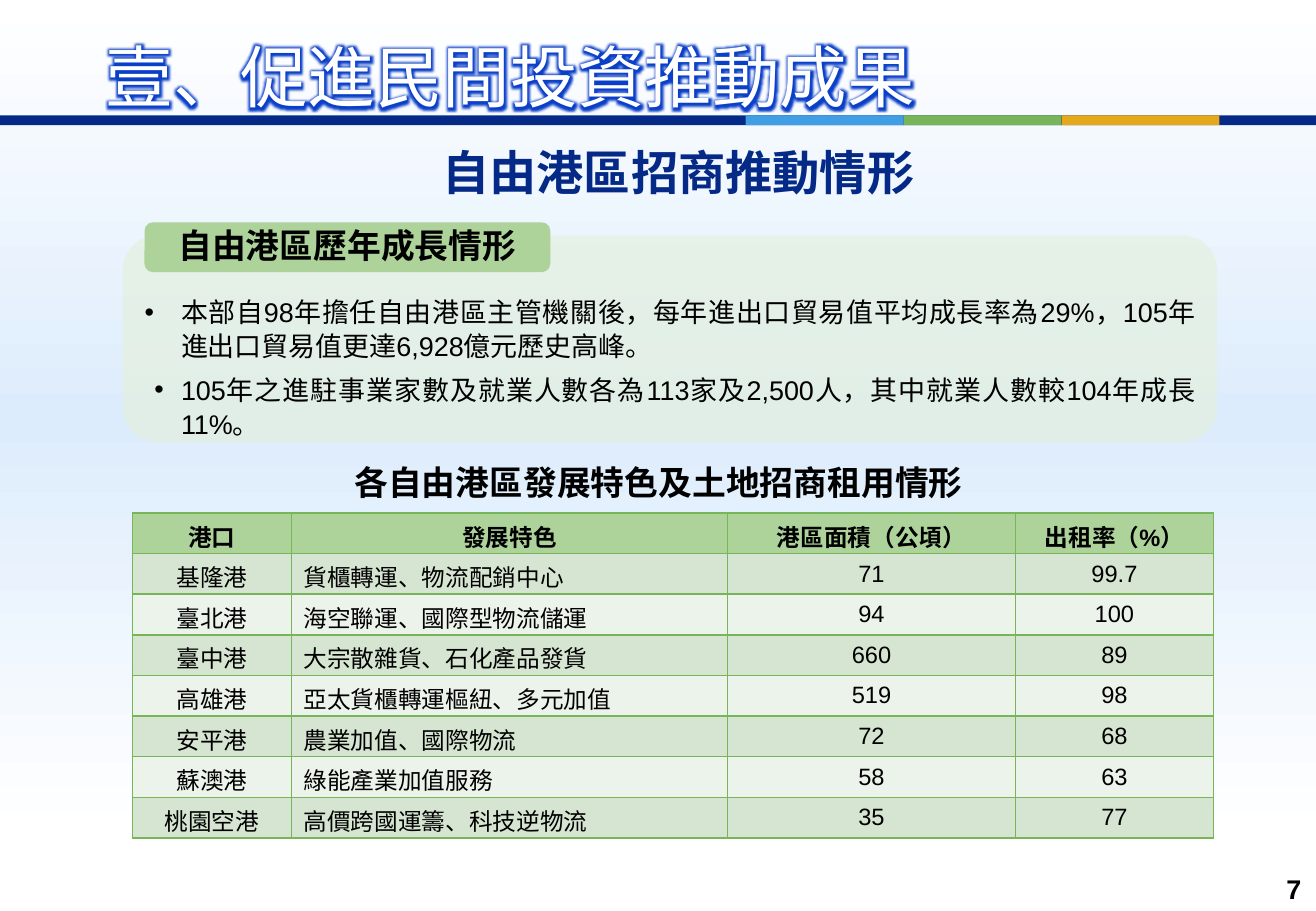
"""Build the slide on free trade port zone results."""
from pptx import Presentation
from pptx.dml.color import RGBColor as RGB
from pptx.enum.shapes import MSO_SHAPE as Geo
from pptx.enum.text import MSO_ANCHOR as Anchor, MSO_AUTO_SIZE as Auto, PP_ALIGN as Align
from pptx.oxml import parse_xml
from pptx.oxml.ns import nsdecls, qn
from pptx.util import Pt

HUES = {
    "navy": "042986", "sky": "3F9EE4", "green": "77B559", "gold": "E4A81B",
    "head": "ADD39B", "odd": "D6E5D1", "even": "ECF3EA", "panel": "E4F0DE",
    "mist": "DDECFC", "glow": "0A3FC8", "white": "FFFFFF", "black": "000000",
}
NS = nsdecls("a")


def put(frame, text, font, para, hue="black", **box):
    """Fill a text frame with one formatted paragraph."""
    base = dict(word_wrap=True, auto_size=Auto.NONE, vertical_anchor=Anchor.MIDDLE)
    for key, val in (base | box).items():
        setattr(frame, key, val)
    line = frame.paragraphs[0]
    line.text = text
    for key, val in para.items():
        setattr(line, key, val)
    run = line.runs[0]
    for key, val in (dict(name="Arial") | font).items():
        setattr(run.font, key, val)
    run.font.color.rgb = RGB.from_string(HUES[hue])
    return run


def block(kind, left, top, width, height, hue):
    """Add a plain filled shape."""
    item = shapes.add_shape(kind, Pt(left), Pt(top), Pt(width), Pt(height))
    item.shadow.inherit = False
    item.line.fill.background()
    item.fill.solid()
    item.fill.fore_color.rgb = RGB.from_string(HUES[hue])
    return item


deck = Presentation()
deck.slide_width, deck.slide_height = Pt(780), Pt(540)
slide = deck.slides.add_slide(deck.slide_layouts[1])
shapes = slide.shapes
title, body = slide.placeholders

back = block(Geo.RECTANGLE, 0, 0, 780, 495.4, "white")
stops = "".join(
    f'<a:gs pos="{pos}"><a:srgbClr val="{HUES[hue]}"/></a:gs>'
    for pos, hue in ((0, "white"), (50000, "mist"), (100000, "white"))
)
fill = back.element.spPr.find(qn("a:solidFill"))
fill.addnext(parse_xml(
    f'<a:gradFill {NS} rotWithShape="1"><a:gsLst>{stops}</a:gsLst>'
    '<a:lin ang="5400000" scaled="0"/></a:gradFill>'
))
back.element.spPr.remove(fill)

block(Geo.RECTANGLE, 0, 68.4, 780, 5.8, "navy")
for num, hue in enumerate(("sky", "green", "gold")):
    block(Geo.RECTANGLE, 442 + 93.6 * num, 68.4, 93.6, 5.8, hue)

panel = block(Geo.ROUNDED_RECTANGLE, 72.7, 139.7, 648.7, 122.4, "panel")
tint = panel.element.spPr.find(qn("a:solidFill"))[0]
tint.append(parse_xml(f'<a:alpha {NS} val="69000"/>'))

label = block(Geo.ROUNDED_RECTANGLE, 85.7, 131.8, 240.5, 29.5, "head")
put(label.text_frame, "自由港區歷年成長情形", dict(size=Pt(20), bold=True),
    dict(alignment=Align.CENTER, line_spacing=Pt(21.6)), margin_left=0, margin_right=0)

notes = (
    ("自由港區招商推動情形", 203, 81.4, 398.2, 41, 28, "navy", Align.CENTER),
    ("各自由港區發展特色及土地招商租用情形", 203, 270, 402.5, 31.7, 20, "black", Align.LEFT),
    ("7", 596.2, 514.1, 182.2, 25.9, 16, "black", Align.RIGHT),
)
for text, left, top, width, height, size, hue, side in notes:
    note = shapes.add_textbox(Pt(left), Pt(top), Pt(width), Pt(height))
    put(note.text_frame, text, dict(size=Pt(size), bold=True), dict(alignment=side), hue)

rows = (
    ("港口", "發展特色", "港區面積（公頃）", "出租率（%）"),
    ("基隆港", "貨櫃轉運、物流配銷中心", "71", "99.7"),
    ("臺北港", "海空聯運、國際型物流儲運", "94", "100"),
    ("臺中港", "大宗散雜貨、石化產品發貨", "660", "89"),
    ("高雄港", "亞太貨櫃轉運樞紐、多元加值", "519", "98"),
    ("安平港", "農業加值、國際物流", "72", "68"),
    ("蘇澳港", "綠能產業加值服務", "58", "63"),
    ("桃園空港", "高價跨國運籌、科技逆物流", "35", "77"),
)
table = shapes.add_table(8, 4, Pt(78.5), Pt(304), Pt(640.8), Pt(192.8)).table
table.horz_banding = False
for col, width in zip(table.columns, (94.3, 258.5, 170.6, 117.4)):
    col.width = Pt(width)
for y, row in enumerate(rows):
    table.rows[y].height = Pt(24.1)
    hue = "head" if y == 0 else "odd" if y % 2 else "even"
    for x, text in enumerate(row):
        cell = table.cell(y, x)
        cell.fill.solid()
        cell.fill.fore_color.rgb = RGB.from_string(HUES[hue])
        cell.vertical_anchor = Anchor.MIDDLE
        cell.margin_top = Pt(3 if y == 0 or x < 2 else 0)
        cell.margin_bottom = 0
        side = Align.JUSTIFY if y and x == 1 else Align.CENTER
        put(cell.text_frame, text, dict(size=Pt(14), bold=y == 0), dict(alignment=side),
            vertical_anchor=None, auto_size=None)
        props = cell._tc.get_or_add_tcPr()
        for spot, edge in enumerate("LRTB"):
            props.insert(spot, parse_xml(
                f'<a:ln{edge} {NS} w="12700"><a:solidFill><a:srgbClr val="{HUES["green"]}"/>'
                f'</a:solidFill></a:ln{edge}>'
            ))

spots = ((title, 55.4, 20.9, 707, 48.2), (body, 85.7, 174.5, 622.8, 87.6))
for item, left, top, width, height in spots:
    item.left, item.top, item.width, item.height = map(Pt, (left, top, width, height))
    shapes._spTree.append(item.element)

run = put(title.text_frame, "壹、促進民間投資推動成果", dict(name="Calibri", size=Pt(40)),
          dict(alignment=Align.LEFT), "white")
run.font.fill._xPr.find(qn("a:solidFill")).addnext(parse_xml(
    f'<a:effectLst {NS}><a:glow rad="63500"><a:srgbClr val="{HUES["glow"]}"/></a:glow></a:effectLst>'
))

frame = body.text_frame
for key in ("left", "right", "top", "bottom"):
    setattr(frame, f"margin_{key}", 0)
frame.auto_size, frame.vertical_anchor = Auto.NONE, Anchor.TOP
points = (
    ("本部自98年擔任自由港區主管機關後，每年進出口貿易值平均成長率為29%，"
     "105年進出口貿易值更達6,928億元歷史高峰。", 21.6),
    ("105年之進駐事業家數及就業人數各為113家及2,500人，其中就業人數較104年成長11%。", 15.8),
)
for num, (text, hang) in enumerate(points):
    line = frame.add_paragraph() if num else frame.paragraphs[0]
    line.text = text
    form = dict(level=num, alignment=Align.JUSTIFY, line_spacing=Pt(20), space_before=Pt(6 * num))
    for key, val in form.items():
        setattr(line, key, val)
    props = line._p.get_or_add_pPr()
    props.set("marL", str(Pt(21.6)))
    props.set("indent", str(-Pt(hang)))
    props.append(parse_xml(f'<a:buFont {NS} typeface="Arial"/>'))
    props.append(parse_xml(f'<a:buChar {NS} char="•"/>'))
    font = line.runs[0].font
    font.name, font.size = "Arial", Pt(16)
    font.color.rgb = RGB.from_string(HUES["black"])

deck.save("out.pptx")
